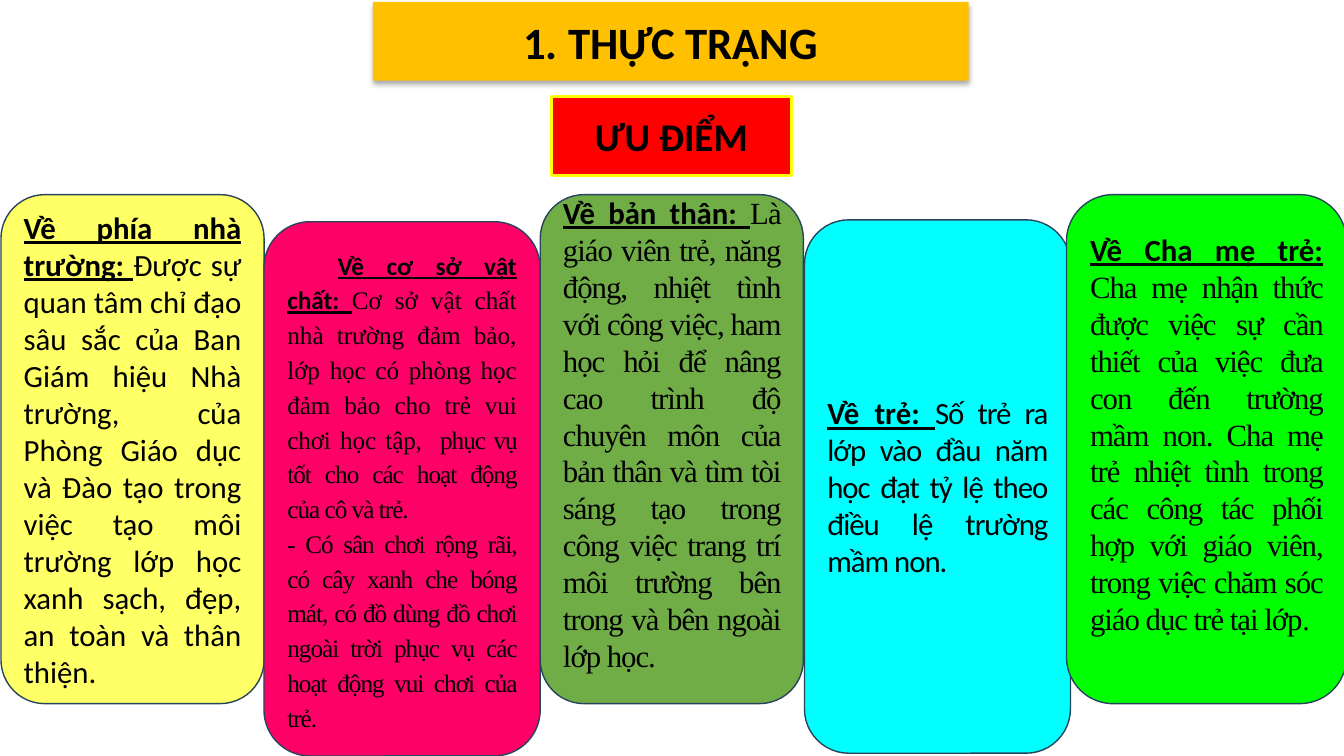
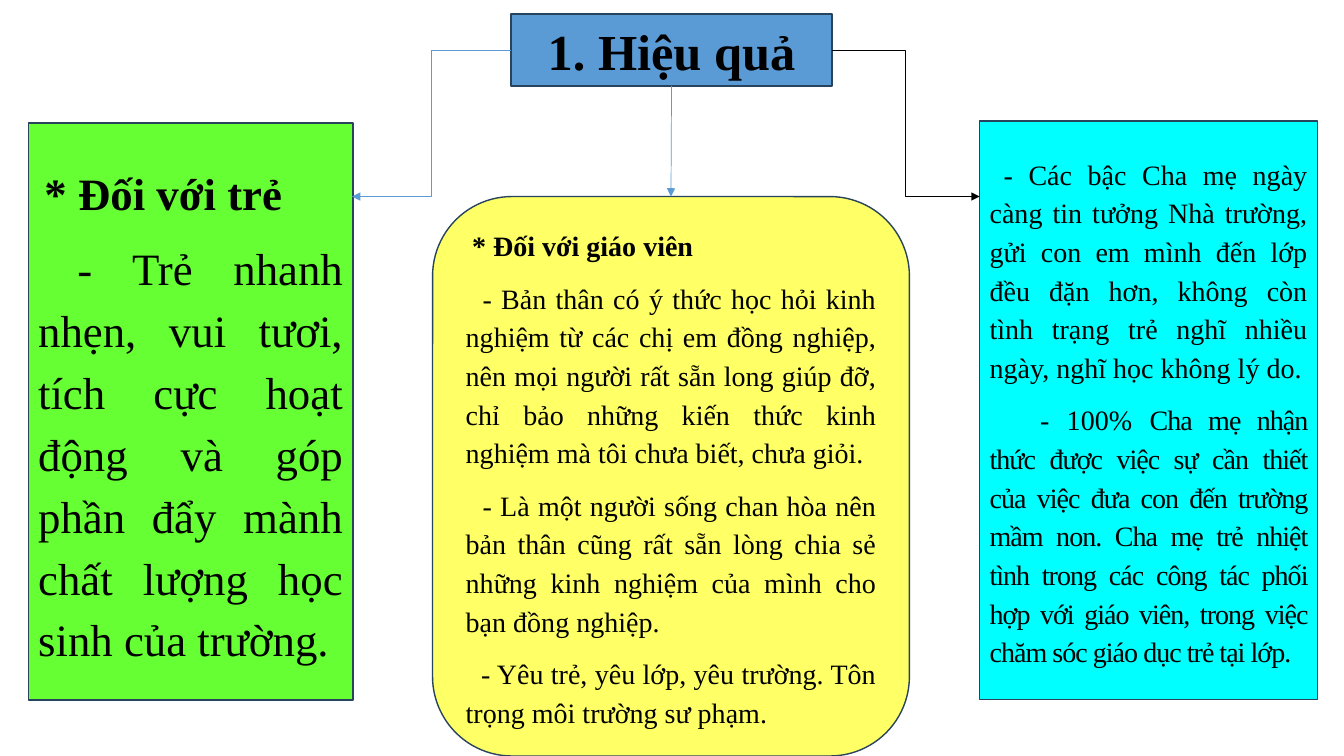
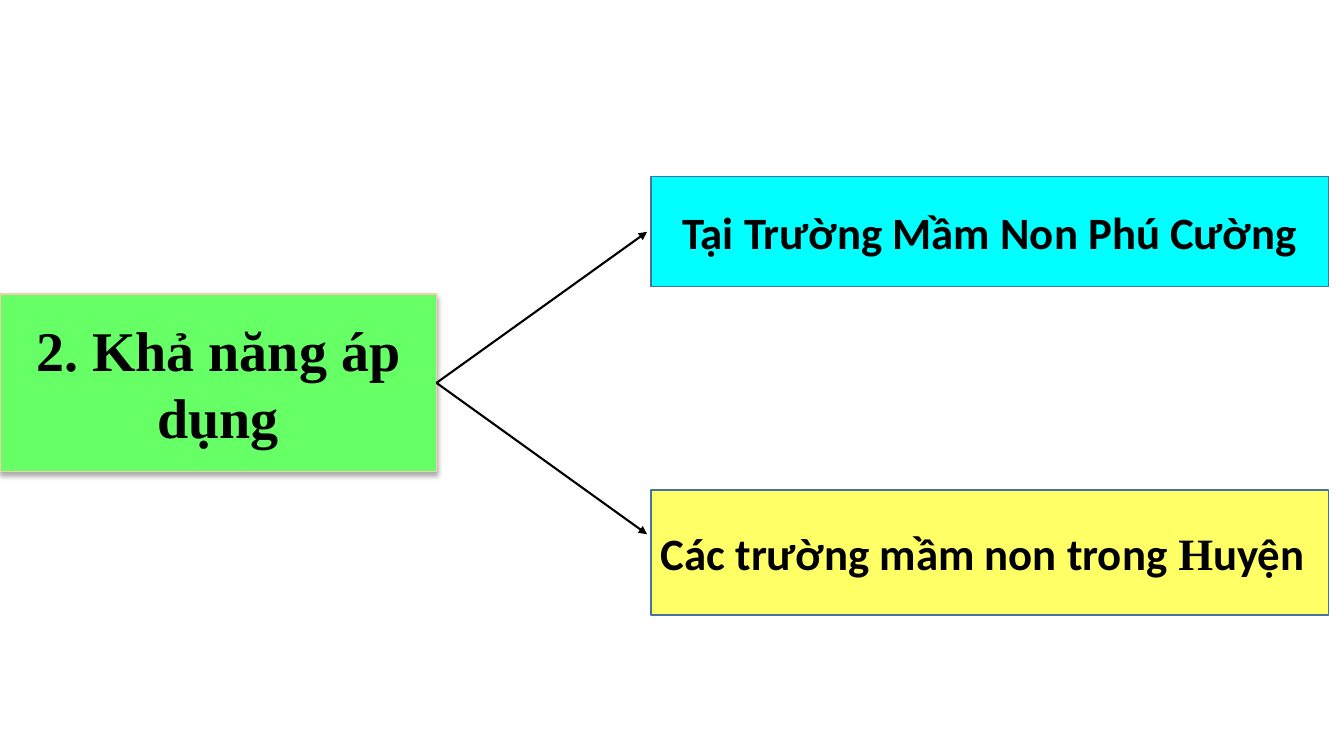
from lxml import etree
from pptx import Presentation
from pptx.dml.color import RGBColor
from pptx.enum.shapes import MSO_CONNECTOR, MSO_SHAPE
from pptx.enum.text import MSO_ANCHOR, MSO_AUTO_SIZE, PP_ALIGN
from pptx.oxml import parse_xml
from pptx.oxml.ns import nsdecls, qn
from pptx.util import Pt

RECT, ROUND = MSO_SHAPE.RECTANGLE, MSO_SHAPE.ROUNDED_RECTANGLE
PROCESS = MSO_SHAPE.FLOWCHART_PROCESS
ALTERNATE = MSO_SHAPE.FLOWCHART_ALTERNATE_PROCESS
STRAIGHT, ELBOW = MSO_CONNECTOR.STRAIGHT, MSO_CONNECTOR.ELBOW
CENTER, JUSTIFY = PP_ALIGN.CENTER, PP_ALIGN.JUSTIFY
TOP, BOTTOM, RIGHT = 0, 2, 3
CALIBRI, TIMES = "Calibri", "Times New Roman"
TIGHT = -0.7

COLORS = {
    "black": "000000", "navy": "28445D", "steel": "43739E", "blue": "5B9BD5",
    "orange": "FFC000", "peach": "F8CBAD", "red": "FF0000", "bright": "FFFF00",
    "yellow": "FFFF66", "pink": "FF0066", "olive": "70AD47", "cyan": "00FFFF",
    "lime": "00FF00", "grass": "66FF33", "mint": "66FF66",
}

# Content: a run is (text, options), a paragraph is (runs, options)
HEAD = {"bold": True, "underline": True}
BODY = {"font": TIMES, "spc": TIGHT}
SPACED = {"line": 1.15, "after": 10, "font": TIMES}


def card_text(head, *body):
    return [([(head, HEAD), *body], {"size": 22})]


PINK_TEXT = [
    ([("Về cơ sở vật chất: ", {**HEAD, "font": CALIBRI}),
      ("Cơ sở vật chất nhà trường đảm bảo, l", {}),
      ("ớp học có phòng học đảm bảo cho trẻ vui chơi học tập, ", {"spc": -0.1}),
      (" phục vụ tốt cho các hoạt động của cô và trẻ.", {"spc": TIGHT})],
     {"size": 18, "line": 1.15, "font": TIMES, "indent": 36}),
    ([("- Có sân chơi rộng rãi, có cây xanh che bóng mát, có đồ dùng đồ chơi "
       "ngoài trời phục vụ các hoạt động vui chơi của trẻ.", {"spc": TIGHT})],
     {"size": 18, "line": 1.15, "font": TIMES}),
]

# Cards: left, top, width, height, fill, extra bottom inset, paragraphs
CARDS = [
    (0.7, 139, 188, 363.6, "yellow", 0, card_text(
        "Về phía nhà trường: ",
        ("Được sự quan tâm chỉ đạo sâu sắc của Ban Giám hiệu Nhà trường, của "
         "Phòng Giáo dục và Đào tạo trong việc tạo môi trường lớp học xanh "
         "sạch, đẹp, an toàn và thân thiện.", {}))),
    (188.6, 158.4, 197.3, 381.6, "pink", 0, PINK_TEXT),
    (385.9, 139, 188, 363.6, "olive", 22, card_text(
        "Về bản thân: ",
        ("Là giáo viên trẻ, năng động, nhiệt tình với công việc, ham học hỏi "
         "để nâng cao trình độ chuyên môn của bản thân và tìm tòi sáng tạo "
         "trong công việc trang trí môi trường bên trong và bên ngoài lớp học.",
         BODY))),
    (574.6, 157, 190, 381, "cyan", 0, card_text(
        "Về trẻ: ",
        ("Số trẻ ra lớp vào đầu năm học đạt tỷ lệ theo điều lệ trường mầm non.",
         {"spc": TIGHT}))),
    (761.8, 139, 200, 363.6, "lime", 22, card_text(
        "Về Cha mẹ trẻ: ",
        ("Cha mẹ nhận thức được việc sự cần thiết của việc đưa con đến trường "
         "mầm non. Cha mẹ trẻ nhiệt tình trong các công tác phối hợp với giáo "
         "viên, trong việc chăm sóc giáo dục trẻ tại lớp", BODY),
        (".", {"font": TIMES, "size": 20}))),
]


def effect(text, size, indent, **options):
    return [(text, options)], {**SPACED, "size": size, "indent": indent}


CHILDREN = [
    effect("* Đối với trẻ", 32, 4.5, bold=True),
    effect("- Trẻ nhanh nhẹn, vui tươi, tích cực hoạt động và góp phần đẩy mành "
           "chất lượng học sinh của trường.", 32, 28),
]
TEACHERS = [
    effect("* Đối với giáo viên", 20, 4.5, bold=True),
    effect("- Bản thân có ý thức học hỏi kinh nghiệm từ các chị em đồng nghiệp, "
           "nên mọi người rất sẵn long giúp đỡ, chỉ bảo những kiến thức kinh "
           "nghiệm mà tôi chưa biết, chưa giỏi.", 20, 12),
    effect("- Là một người sống chan hòa nên bản thân cũng rất sẵn lòng chia sẻ "
           "những kinh nghiệm của mình cho bạn đồng nghiệp.", 20, 12),
    effect("- Yêu trẻ, yêu lớp, yêu trường. Tôn trọng môi trường sư phạm.", 20, 11),
]
PARENTS = [
    effect("- Các bậc Cha mẹ ngày càng tin tưởng Nhà trường, gửi con em mình đến "
           "lớp đều đặn hơn, không còn tình trạng trẻ nghĩ nhiều ngày, nghĩ học "
           "không lý do.", 20, 10),
    ([("- 100% ", {}),
      ("Cha mẹ nhận thức được việc sự cần thiết của việc đưa con đến trường mầm "
       "non. Cha mẹ trẻ nhiệt tình trong các công tác phối hợp với giáo viên, "
       "trong việc chăm sóc giáo dục trẻ tại lớp.", {"spc": TIGHT})],
     {**SPACED, "size": 20, "indent": 36}),
]

PLACES = [
    (126, 78.5, "cyan", [([("Tại Trường Mầm Non Phú Cường", {})],
                          {"size": 32, "bold": True, "align": CENTER})]),
    (350, 89.3, "yellow", [([("Các trường mầm non trong ", {"font": CALIBRI}),
                             ("H", {"font": TIMES}), ("uyện", {"font": CALIBRI})],
                            {"size": 32, "bold": True})]),
]


def rgb(name):
    return RGBColor.from_string(COLORS[name])


def write(sp, paragraphs):
    tf = sp.text_frame
    tf.word_wrap = True
    tf.auto_size = MSO_AUTO_SIZE.NONE
    tf.vertical_anchor = MSO_ANCHOR.MIDDLE
    for i, (runs, opts) in enumerate(paragraphs):
        p = tf.add_paragraph() if i else tf.paragraphs[0]
        p.alignment = opts.get("align", JUSTIFY)
        p.line_spacing = opts.get("line", 1.0)
        p.space_before, p.space_after = Pt(0), Pt(opts.get("after", 0))
        if "indent" in opts:
            pPr = p._p.get_or_add_pPr()
            pPr.set("marL", "0")
            pPr.set("indent", str(Pt(opts["indent"])))
        p.font.name = opts.get("font", CALIBRI)
        p.font.size = Pt(opts["size"])
        p.font.bold = opts.get("bold", False)
        p.font.color.rgb = rgb("black")
        for text, style in runs:
            r = p.add_run()
            r.text = text
            if "font" in style:
                r.font.name = style["font"]
            if "size" in style:
                r.font.size = Pt(style["size"])
            if "bold" in style:
                r.font.bold = style["bold"]
            if "underline" in style:
                r.font.underline = style["underline"]
            if "spc" in style:
                r._r.get_or_add_rPr().set("spc", str(round(style["spc"] * 100)))


def paint(sp, fill, line, width=1):
    sp.shadow.inherit = False
    sp.fill.solid()
    sp.fill.fore_color.rgb = rgb(fill)
    if line:
        sp.line.color.rgb = rgb(line)
        sp.line.width = Pt(width)
    else:
        sp.line.fill.background()


def add_box(slide, kind, box, fill, paragraphs, line="navy", width=1):
    sp = slide.shapes.add_shape(kind, *map(Pt, box))
    paint(sp, fill, line, width)
    write(sp, paragraphs)
    return sp


def add_title_slide(prs, text, geometry, box, fill, line, size, font, shadow=False):
    """Title-only slide whose title placeholder takes a preset outline."""
    slide = prs.slides.add_slide(prs.slide_layouts[5])
    sp = slide.shapes.title
    sp.left, sp.top, sp.width, sp.height = map(Pt, box)
    spPr = sp._element.spPr
    spPr.append(parse_xml(f'<a:prstGeom {nsdecls("a")} prst="{geometry}"><a:avLst/></a:prstGeom>'))
    paint(sp, fill, line)
    if shadow:
        spPr.find(qn("a:effectLst")).append(parse_xml(
            f'<a:outerShdw {nsdecls("a")} blurRad="{Pt(3.5)}" dist="{Pt(2.2)}" dir="5400000" '
            'rotWithShape="0"><a:srgbClr val="000000"><a:alpha val="32000"/></a:srgbClr></a:outerShdw>'))
    write(sp, [([(text, {"bold": True})],
                {"size": size, "font": font, "bold": True, "align": CENTER})])
    return slide, sp


def add_arrow(slide, kind, start, end, color, width, begin=None, finish=None):
    c = slide.shapes.add_connector(kind, *map(Pt, (*start, *end)))
    if begin:
        c.begin_connect(*begin)
    if finish:
        c.end_connect(*finish)
    c.line.color.rgb = rgb(color)
    c.line.width = Pt(width)
    etree.SubElement(c.line._get_or_add_ln(), qn("a:tailEnd")).set("type", "triangle")
    etree.SubElement(c._element.spPr, qn("a:effectLst"))


def build_status(prs):
    slide, _ = add_title_slide(prs, "1. THỰC TRẠNG", "ellipse", (266.4, 1.4, 425.5, 56.2),
                               "orange", None, 32, CALIBRI, shadow=True)
    add_box(slide, RECT, (393.8, 69.1, 171.4, 56.2), "red",
            [([("ƯU ĐIỂM", {})], {"size": 28, "bold": True, "align": CENTER})], "bright", 2.25)
    for *box, fill, extra, paragraphs in CARDS:
        sp = add_box(slide, ROUND, box, fill, paragraphs)
        sp.text_frame.margin_bottom = Pt(3.6 + extra)


def build_effects(prs):
    slide, title = add_title_slide(prs, "1. Hiệu quả", "flowChartAlternateProcess",
                                   (365, 10, 229.4, 51.4), "blue", "navy", 36, TIMES)
    add_box(slide, PROCESS, (20.2, 88, 232, 412), "grass", CHILDREN)
    teachers = add_box(slide, ALTERNATE, (309, 140.4, 340.6, 399.6), "yellow", TEACHERS)
    add_box(slide, PROCESS, (699.8, 86.4, 241.2, 413.3), "cyan", PARENTS)
    # Arrows from the title to the three groups
    add_arrow(slide, ELBOW, (594.4, 35.7), (699.8, 140.4), "black", 0.5)
    add_arrow(slide, ELBOW, (365, 35.7), (251.5, 140.4), "blue", 0.5)
    add_arrow(slide, STRAIGHT, (480, 61.4), (480, 140.4), "blue", 0.5,
              (title, BOTTOM), (teachers, TOP))


def build_application(prs):
    slide, title = add_title_slide(prs, "2. Khả năng áp dụng", "flowChartTerminator",
                                   (0, 210, 311.8, 127), "mint", "peach", 40, TIMES, shadow=True)
    for end_y in (165.6, 381.6):
        add_arrow(slide, STRAIGHT, (311.8, 273.5), (462.2, end_y), "black", 1.5, (title, RIGHT))
    for top, height, fill, paragraphs in PLACES:
        add_box(slide, RECT, (465, top, 484, height), fill, paragraphs, "steel")


def main():
    prs = Presentation()
    prs.slide_width, prs.slide_height = Pt(960), Pt(540)
    build_status(prs)
    build_effects(prs)
    build_application(prs)
    prs.save("out.pptx")


if __name__ == "__main__":
    main()
